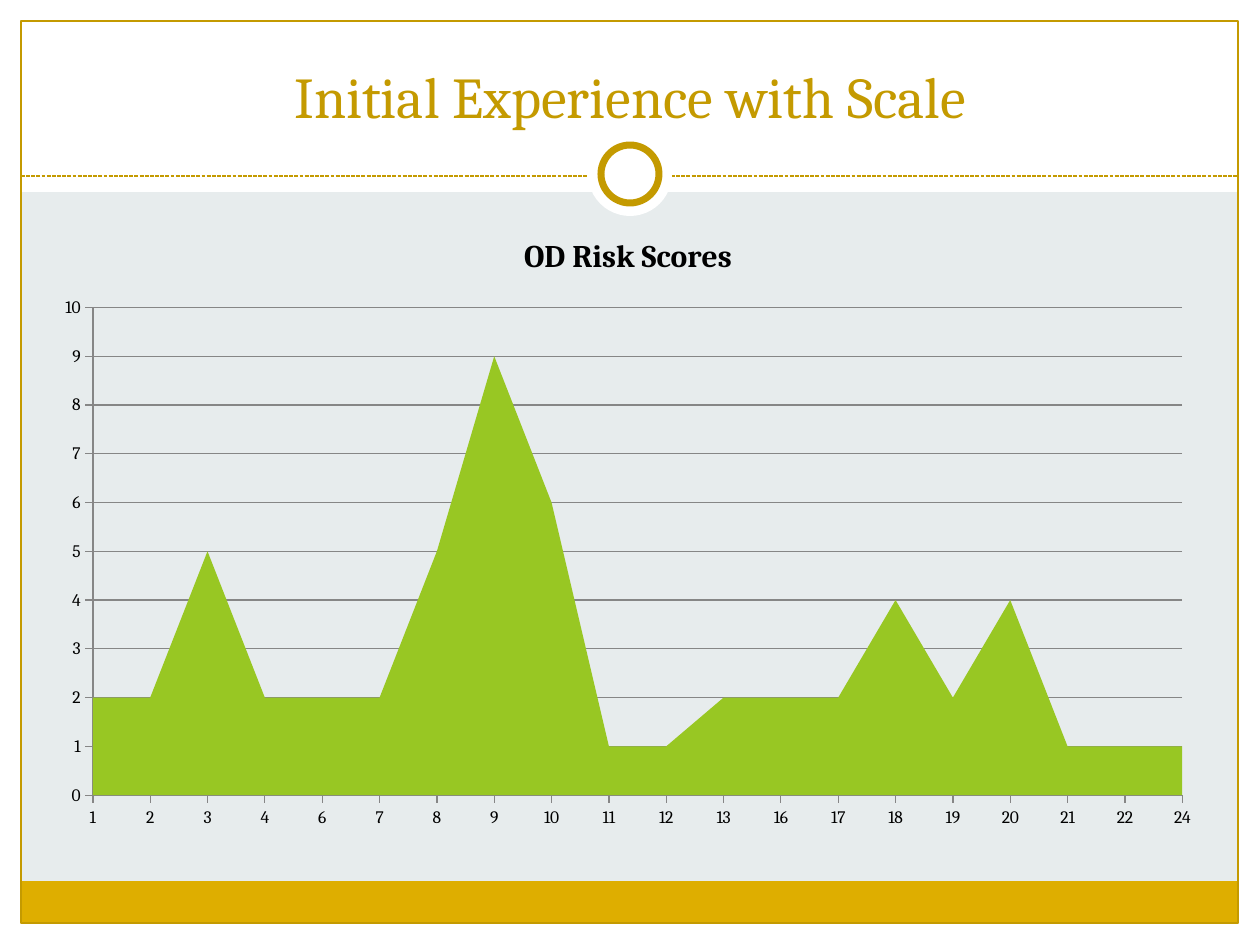
from lxml import etree
from pptx import Presentation, util as u
from pptx.chart.data import CategoryChartData
from pptx.dml.color import RGBColor
from pptx.enum import chart as c, dml, shapes, text
from pptx.oxml.ns import qn

PX = 914400 / 126
FONT = "Cambria"
GOLD, WHITE, GRID = "C49A00", "FFFFFF", "868686"
RECTANGLE, OVAL = shapes.MSO_SHAPE.RECTANGLE, shapes.MSO_SHAPE.OVAL
CATEGORIES = [1, 2, 3, 4, 6, 7, 8, 9, 10, 11, 12, 13, 16, 17, 18, 19, 20, 21, 22, 24]
SCORES = [2, 2, 5, 2, 2, 2, 5, 9, 6, 1, 1, 2, 2, 2, 4, 2, 4, 1, 1, 1]


def px(*lengths):
    return [u.Emu(round(length * PX)) for length in lengths]


def color(value):
    return RGBColor.from_string(value)


def set_line(line, value, points):
    line.color.rgb = color(value)
    line.width = u.Pt(points)


def set_font(font, size, value, bold=False):
    font.name = FONT
    font.size = u.Pt(size)
    font.bold = bold
    font.color.rgb = color(value)


def add_panel(slide, kind, box, fill=None, line_width=0):
    shape = slide.shapes.add_shape(kind, *px(*box))
    shape.shadow.inherit = False
    if fill:
        shape.fill.solid()
        shape.fill.fore_color.rgb = color(fill)
    else:
        shape.fill.background()
    if line_width:
        set_line(shape.line, GOLD, line_width)
    else:
        shape.line.fill.background()


def add_divider(slide, left, right, y):
    divider = slide.shapes.add_connector(
        shapes.MSO_CONNECTOR.STRAIGHT, *px(left, y, right, y))
    set_line(divider.line, GOLD, 0.75)
    divider.line.dash_style = dml.MSO_LINE.SQUARE_DOT
    etree.SubElement(divider._element.spPr, qn("a:effectLst"))


def add_title(slide, box, wording):
    frame = slide.shapes.add_textbox(*px(*box)).text_frame
    frame.word_wrap = True
    frame.vertical_anchor = text.MSO_ANCHOR.BOTTOM
    paragraph = frame.paragraphs[0]
    paragraph.alignment = text.PP_ALIGN.CENTER
    run = paragraph.add_run()
    run.text = wording
    set_font(run.font, 33, GOLD)


def style_axis(axis):
    axis.major_tick_mark = c.XL_TICK_MARK.OUTSIDE
    axis.minor_tick_mark = c.XL_TICK_MARK.NONE
    set_line(axis.format.line, GRID, 0.75)
    set_font(axis.tick_labels.font, 10, "000000")


def add_area_chart(slide, box, wording):
    data = CategoryChartData(number_format="General")
    data.categories = [str(category) for category in CATEGORIES]
    data.add_series("Series 1", SCORES)
    chart = slide.shapes.add_chart(c.XL_CHART_TYPE.AREA, *px(*box), data).chart
    set_font(chart.font, 10, "000000")
    chart.has_legend = False
    chart.has_title = True
    run = chart.chart_title.text_frame.paragraphs[0].add_run()
    run.text = wording
    set_font(run.font, 18, "000000", bold=True)
    chart.plots[0].vary_by_categories = False
    fill = chart.plots[0].series[0].format.fill
    fill.solid()
    fill.fore_color.rgb = color("98C723")
    style_axis(chart.category_axis)
    scale = chart.value_axis
    style_axis(scale)
    scale.minimum_scale, scale.maximum_scale, scale.major_unit = 0, 10, 1
    scale.has_major_gridlines = True
    set_line(scale.major_gridlines.format.line, GRID, 0.75)


def main():
    presentation = Presentation()
    presentation.slide_width, presentation.slide_height = px(1260, 945)
    slide = presentation.slides.add_slide(presentation.slide_layouts[6])
    background = slide.background.fill
    background.solid()
    background.fore_color.rgb = color("E7ECED")

    margins = [(0, 924, 1260, 21), (0, 0, 1260, 192),
               (0, 0, 21, 945), (1239, 0, 21, 945)]
    for margin in margins:
        add_panel(slide, RECTANGLE, margin, WHITE)
    add_panel(slide, RECTANGLE, (21, 881, 1217, 43), "DEAE00")
    add_panel(slide, RECTANGLE, (21, 21, 1217, 902), line_width=0.75)
    add_divider(slide, 21, 1238, 176)
    add_panel(slide, OVAL, (588, 132, 84, 84), WHITE)
    add_panel(slide, OVAL, (601, 145, 58, 58), WHITE, 4)
    add_title(slide, (42, 31, 1176, 105), "Initial Experience with Scale")
    add_area_chart(slide, (42, 210, 1172, 630), "OD Risk Scores")
    presentation.save("out.pptx")


if __name__ == "__main__":
    main()
